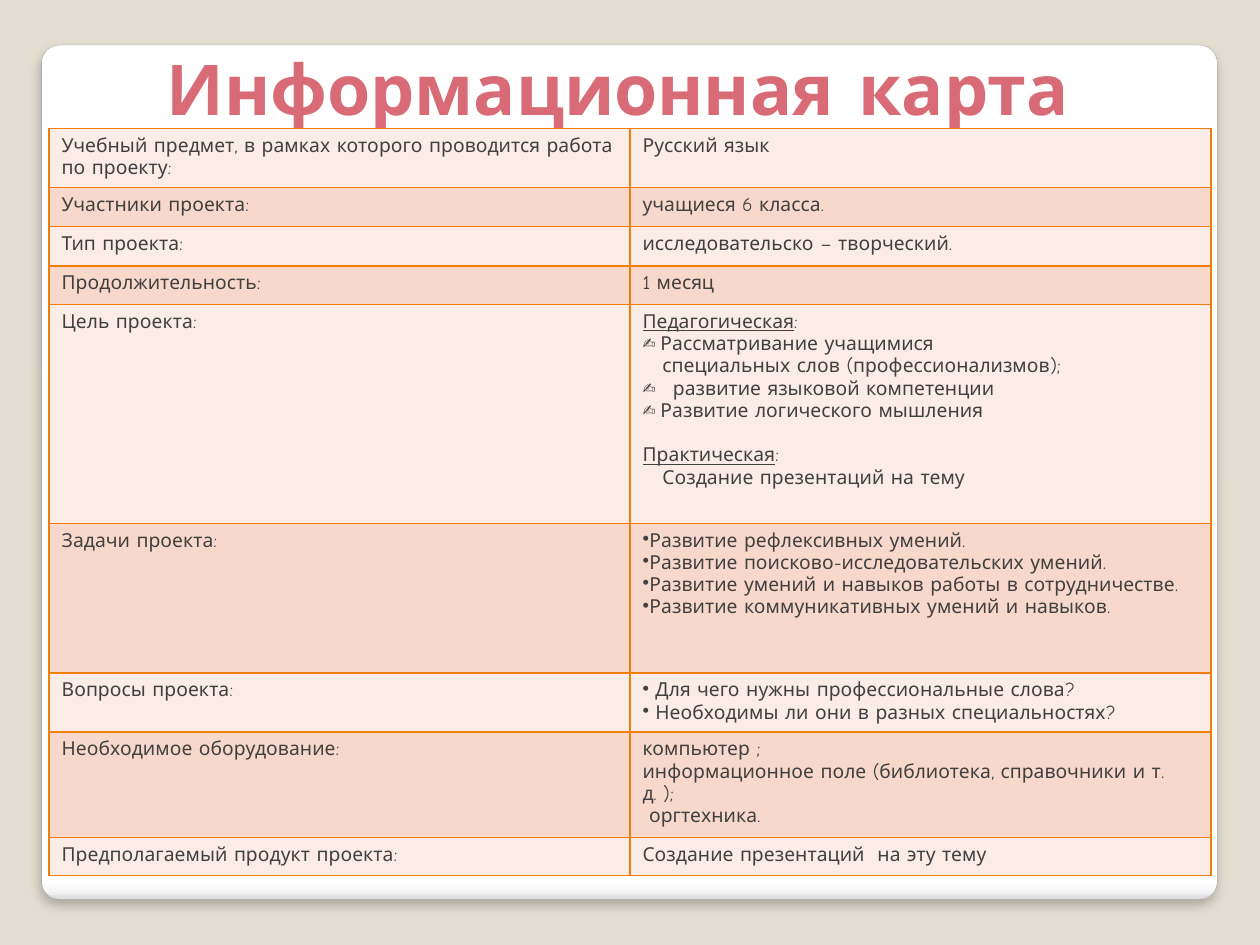
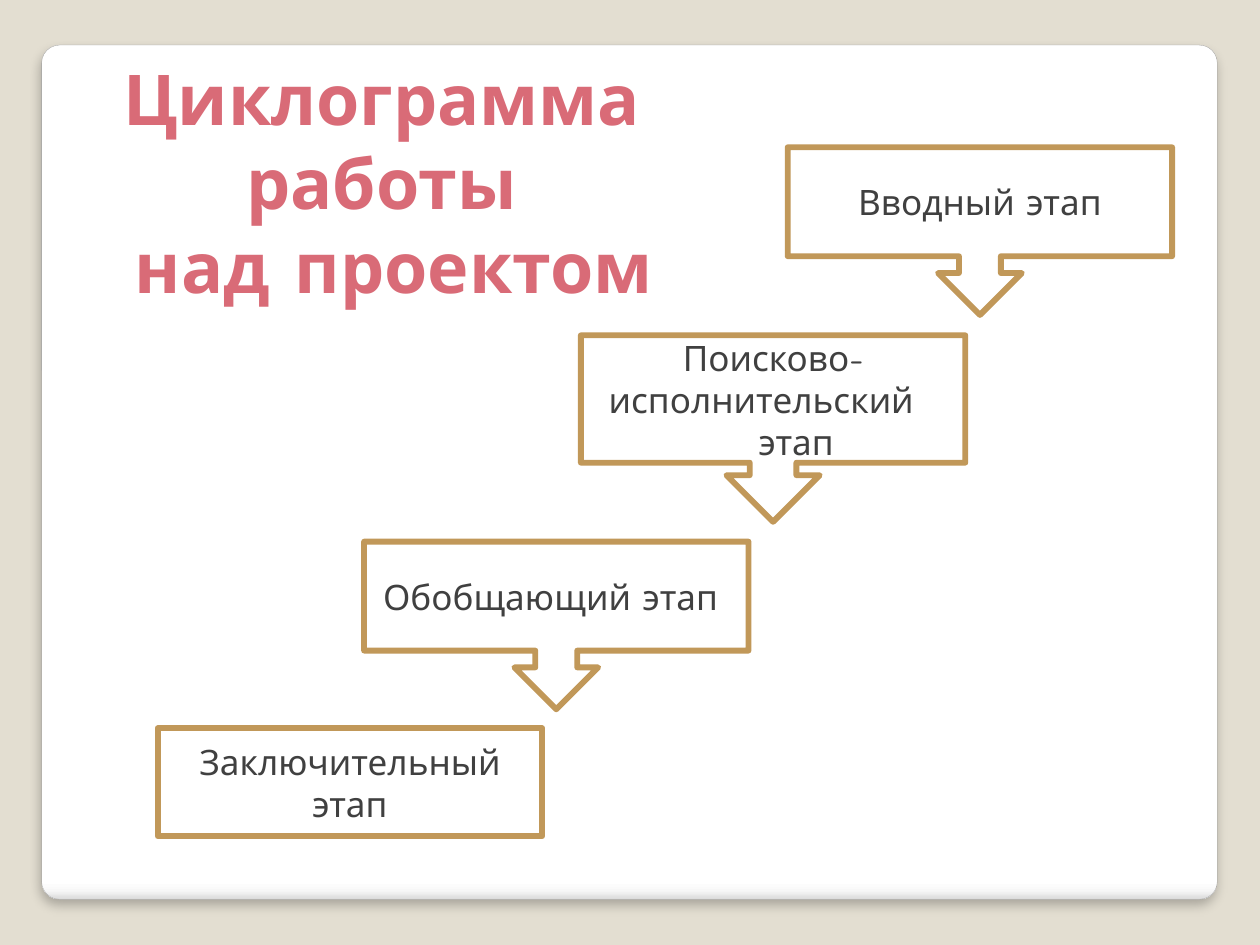
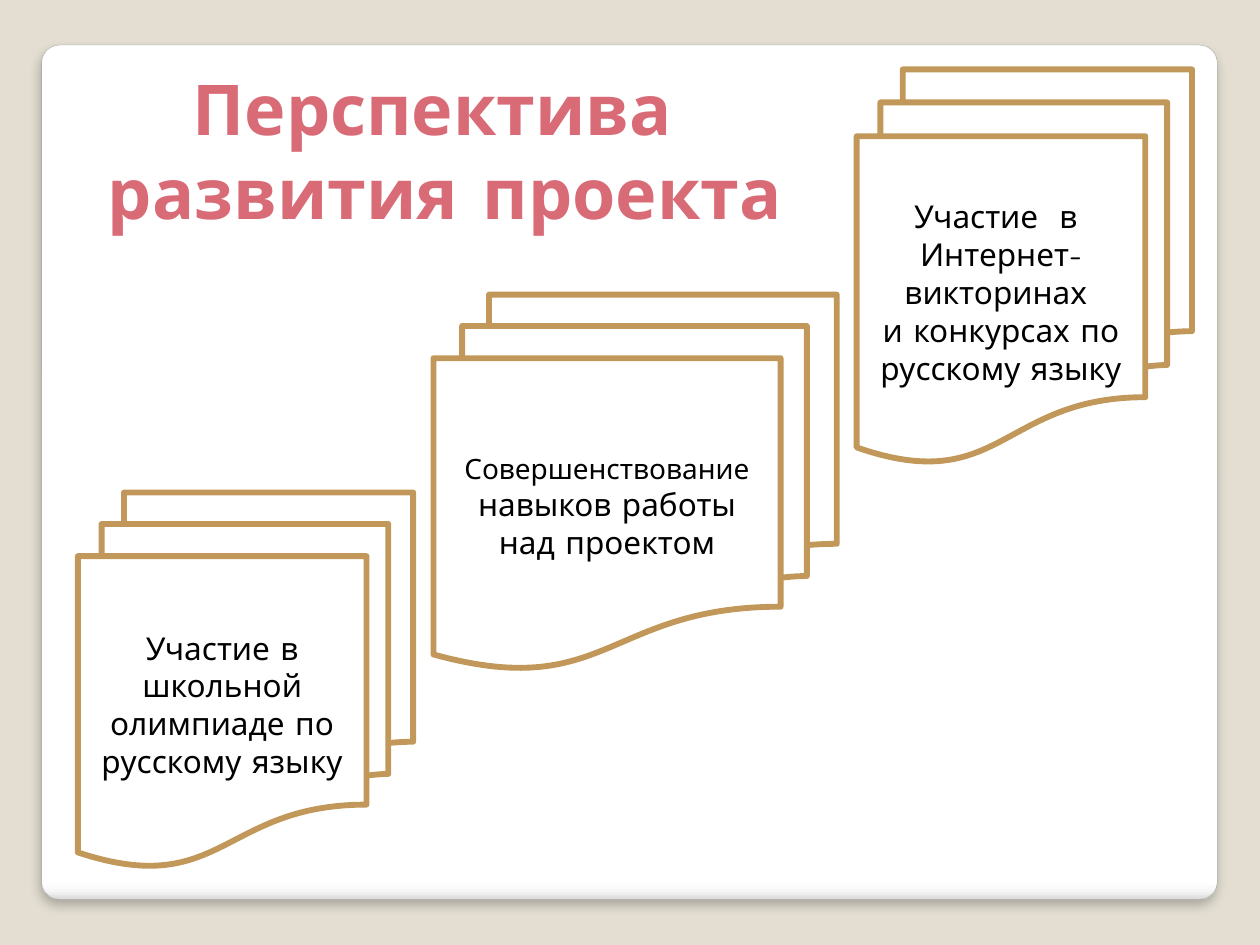
"""Build three slides about a school project: information card, stages and prospects."""
from dataclasses import dataclass

from lxml.etree import SubElement
from pptx import Presentation
from pptx.dml.color import RGBColor
from pptx.enum.shapes import MSO_SHAPE
from pptx.enum.text import MSO_ANCHOR, MSO_AUTO_SIZE, PP_ALIGN
from pptx.oxml.ns import qn
from pptx.util import Cm, Pt


@dataclass(frozen=True)
class Theme:
    """Colours, font and type sizes of the deck."""

    font: str = "Comic Neue"
    backdrop: str = "E3DED1"
    panel_edge: str = "A4A4A4"
    panel_stops: tuple = ((0, "FFFFFF"), (98, "FFFFFF"), (99, "F7F7F7"), (100, "DADADA"))
    title: str = "D96B77"
    ink: str = "404040"
    black: str = "000000"
    paper: str = "FFFFFF"
    outline: str = "C19859"
    grid: str = "F07F09"
    bands: tuple = ("FCECE7", "F9D8CC")
    title_size: float = 40
    stage_size: float = 20
    card_size: float = 18
    small_card_size: float = 16
    table_size: float = 11
    outline_width: float = 3.35


@dataclass(frozen=True)
class Box:
    """A rectangle in centimetres."""

    left: float
    top: float
    width: float
    height: float

    def inner(self, dx, dy, width, height):
        """Return a box offset from the corner of this one."""
        return Box(self.left + dx, self.top + dy, width, height)

    def emu(self):
        """Return left, top, width and height as lengths."""
        return Cm(self.left), Cm(self.top), Cm(self.width), Cm(self.height)


@dataclass(frozen=True)
class Line:
    """A paragraph given as runs, with its bullet and indents in centimetres."""

    runs: tuple
    bullet: str = ""
    left: float = 0
    right: float = 0
    before: float = 0


THEME = Theme()
PANEL = Box(0.84, 0.91, 23.7, 17.22)

GOALS = (
    Line((("Педагогическая", True), (":", False))),
    Line((("Рассматривание учащимися", False),), "✍", 0.36),
    Line((("специальных слов (профессионализмов);", False),), left=0.4),
    Line((("развитие языковой компетенции", False),), "✍", 0.61),
    Line((("Развитие логического мышления", False),), "✍", 0.36),
    Line((("Практическая", True), (":", False)), before=12.7),
    Line((("Создание презентаций на тему", False),), left=0.4),
)


def plain(text, **layout):
    """Return a line with one run that is not underlined."""
    return Line(((text, False),), **layout)


TASKS = tuple(plain(text, bullet="•", left=0.13) for text in (
    "Развитие рефлексивных умений.",
    "Развитие поисково-исследовательских умений.",
    "Развитие умений и навыков работы в сотрудничестве.",
    "Развитие коммуникативных умений и навыков.",
))
QUESTIONS = tuple(plain(text, bullet="•", left=0.26) for text in (
    "Для чего нужны профессиональные слова?",
    "Необходимы ли они в разных специальностях?",
))
EQUIPMENT = (
    plain("компьютер ;"),
    plain("информационное поле (библиотека, справочники и т. д. );"),
    plain("оргтехника.", left=0.13),
)
CARD_ROWS = (
    (1.19, "Учебный предмет, в рамках которого проводится работа по проекту:",
     (plain("Русский язык"),)),
    (0.79, "Участники проекта:", (plain("учащиеся 6 класса."),)),
    (0.79, "Тип проекта:", (plain("исследовательско – творческий."),)),
    (0.78, "Продолжительность:", (plain("1 месяц"),)),
    (4.41, "Цель проекта:", GOALS),
    (3.02, "Задачи проекта:", TASKS),
    (1.19, "Вопросы проекта:", QUESTIONS),
    (2.11, "Необходимое оборудование:", EQUIPMENT),
    (0.77, "Предполагаемый продукт проекта:", (plain("Создание презентаций  на эту тему"),)),
)

STAGES = (
    (MSO_SHAPE.DOWN_ARROW_CALLOUT, (15.04, 2.06, 7.75, 3.38), (), (plain("Вводный этап"),)),
    (MSO_SHAPE.DOWN_ARROW_CALLOUT, (6.5, 10.01, 7.75, 3.38), (), (plain("Обобщающий этап "),)),
    (MSO_SHAPE.DOWN_ARROW_CALLOUT, (10.87, 5.85, 7.75, 3.76), (0.25, 0.25, 0.25, 0.683),
     (plain("Поисково-"), plain("исполнительский", right=0.48), plain("этап", left=0.93))),
    (MSO_SHAPE.RECTANGLE, (2.34, 13.77, 7.75, 2.18), (), (plain("Заключительный этап"),)),
)

PROSPECTS = (
    ((16.43, 0.49, 6.76, 7.92),
     ((("Участие  в  Интернет-", THEME.card_size),),
      (("викторинах ", THEME.card_size),),
      (("и конкурсах по русскому языку", THEME.card_size),))),
    ((0.73, 9.02, 6.76, 7.54),
     ((("Участие в школьной олимпиаде по русскому языку", THEME.card_size),),)),
    ((7.9, 5.03, 8.13, 7.54),
     ((("Совершенствование ", THEME.small_card_size),
       ("навыков работы над проектом", THEME.card_size)),)),
)


def rgb(value):
    """Return a colour from its hex text."""
    return RGBColor.from_string(value)


def add_run(paragraph, text, size, color, bold=False, underline=False):
    """Add one formatted run to a paragraph."""
    run = paragraph.add_run()
    run.text = text
    run.font.name = THEME.font
    run.font.size = Pt(size)
    run.font.bold = bold
    run.font.underline = underline
    run.font.color.rgb = rgb(color)


def paragraphs(frame, lines):
    """Yield one paragraph of the frame with each line."""
    for index, line in enumerate(lines):
        yield (frame.add_paragraph() if index else frame.paragraphs[0]), line


def write_lines(frame, lines, size, align):
    """Fill a text frame with indented or bulleted lines."""
    for paragraph, line in paragraphs(frame, lines):
        paragraph.alignment = align
        properties = paragraph._p.get_or_add_pPr()
        properties.set("marL", str(Cm(line.left)))
        properties.set("marR", str(Cm(line.right)))
        properties.set("indent", str(-Cm(line.left) if line.bullet else 0))
        if line.before:
            paragraph.space_before = Pt(line.before)
        if line.bullet:
            SubElement(properties, qn("a:buChar"), char=line.bullet)
        for text, underline in line.runs:
            add_run(paragraph, text, size, THEME.ink, underline=underline)


def solid(parent, color):
    """Append a solid fill and return its colour element."""
    fill = SubElement(parent, qn("a:solidFill"))
    return SubElement(fill, qn("a:srgbClr"), val=color)


def dress_layout(layout, slide, box):
    """Give the layout its backdrop and the rounded panel behind the content."""
    layout.background.fill.solid()
    layout.background.fill.fore_color.rgb = rgb(THEME.backdrop)
    panel = slide.shapes.add_shape(MSO_SHAPE.ROUNDED_RECTANGLE, *box.emu())
    panel.adjustments[0] = 0.021
    panel.line.color.rgb = rgb(THEME.panel_edge)
    panel.line.width = Pt(0.16)
    panel.fill.gradient()
    panel.fill.gradient_angle = 270
    stops = panel.element.spPr.find(".//" + qn("a:gsLst"))
    for stop in list(stops):
        stops.remove(stop)
    for position, color in THEME.panel_stops:
        stop = SubElement(stops, qn("a:gs"), pos=str(position * 1000))
        SubElement(stop, qn("a:srgbClr"), val=color)
    panel.shadow.inherit = False
    effects = panel.element.spPr.find(qn("a:effectLst"))
    shadow = SubElement(effects, qn("a:outerShdw"), blurRad=str(Pt(6)), dist=str(Pt(4)),
                        dir="5400000", algn="t", rotWithShape="0")
    shade = SubElement(shadow, qn("a:srgbClr"), val=THEME.black)
    SubElement(shade, qn("a:alpha"), val="25000")
    panel.element.nvSpPr.cNvPr.set("id", "50")
    layout.shapes.element.insert(2, panel.element)


def place_title(slide, box, lines):
    """Move the title placeholder to the box and write its lines."""
    title = slide.shapes.title
    title.left, title.top, title.width, title.height = box.emu()
    frame = title.text_frame
    frame.word_wrap = False
    frame.auto_size = MSO_AUTO_SIZE.SHAPE_TO_FIT_TEXT
    frame.vertical_anchor = MSO_ANCHOR.TOP
    for paragraph, line in paragraphs(frame, lines):
        paragraph.alignment = PP_ALIGN.CENTER
        add_run(paragraph, line, THEME.title_size, THEME.title, bold=True)


def add_outlined(slide, kind, box):
    """Add a white shape with a thick outline and return it."""
    shape = slide.shapes.add_shape(kind, *box.emu())
    shape.shadow.inherit = False
    shape.fill.solid()
    shape.fill.fore_color.rgb = rgb(THEME.paper)
    shape.line.color.rgb = rgb(THEME.outline)
    shape.line.width = Pt(THEME.outline_width)
    shape.text_frame.word_wrap = True
    shape.text_frame.vertical_anchor = MSO_ANCHOR.MIDDLE
    return shape


def fill_cell(cell, lines, band):
    """Write a table cell and give it borders and a band colour."""
    properties = cell._tc.get_or_add_tcPr()
    for side in ("lnL", "lnR", "lnT", "lnB"):
        solid(SubElement(properties, qn("a:" + side), w=str(Pt(1))), THEME.grid)
    cell.fill.solid()
    cell.fill.fore_color.rgb = rgb(band)
    write_lines(cell.text_frame, lines, THEME.table_size, PP_ALIGN.LEFT)


def information_card(slide, box):
    """Build the slide with the project table."""
    place_title(slide, box.inner(0.94, -0.12, 21.34, 1.96), ("Информационная карта",))
    height = sum(row[0] for row in CARD_ROWS)
    place = box.inner(0.15, 1.68, 23.42, height)
    table = slide.shapes.add_table(len(CARD_ROWS), 2, *place.emu()).table
    table.first_row = table.horz_banding = False
    for column in table.columns:
        column.width = Cm(place.width / 2)
    for index, (row_height, topic, details) in enumerate(CARD_ROWS):
        table.rows[index].height = Cm(row_height)
        band = THEME.bands[index % 2]
        fill_cell(table.cell(index, 0), (plain(topic),), band)
        fill_cell(table.cell(index, 1), details, band)


def project_stages(slide, box):
    """Build the slide with the descending stages."""
    place_title(slide, box.inner(0.56, 0.08, 13.08, 5.38),
                ("Циклограмма ", "работы ", "над проектом"))
    for kind, place, adjustments, lines in STAGES:
        stage = add_outlined(slide, kind, box.inner(*place))
        for index, value in enumerate(adjustments):
            stage.adjustments[index] = value
        write_lines(stage.text_frame, lines, THEME.stage_size, PP_ALIGN.CENTER)


def project_prospects(slide, box):
    """Build the slide with the stacked document cards."""
    place_title(slide, box.inner(0.15, 0.28, 15.95, 3.68), ("Перспектива ", "развития проекта"))
    for place, lines in PROSPECTS:
        prospect = add_outlined(slide, MSO_SHAPE.FLOWCHART_MULTIDOCUMENT, box.inner(*place))
        for paragraph, runs in paragraphs(prospect.text_frame, lines):
            paragraph.alignment = PP_ALIGN.CENTER
            for text, size in runs:
                add_run(paragraph, text, size, THEME.black)


def main():
    """Build and save the deck."""
    deck = Presentation()
    deck.slide_width, deck.slide_height = Cm(25.4), Cm(19.05)
    layout = deck.slide_layouts[5]
    builders = (information_card, project_stages, project_prospects)
    slides = [deck.slides.add_slide(layout) for _ in builders]
    dress_layout(layout, slides[0], PANEL)
    for build, slide in zip(builders, slides):
        build(slide, PANEL)
    deck.save("out.pptx")


if __name__ == "__main__":
    main()
